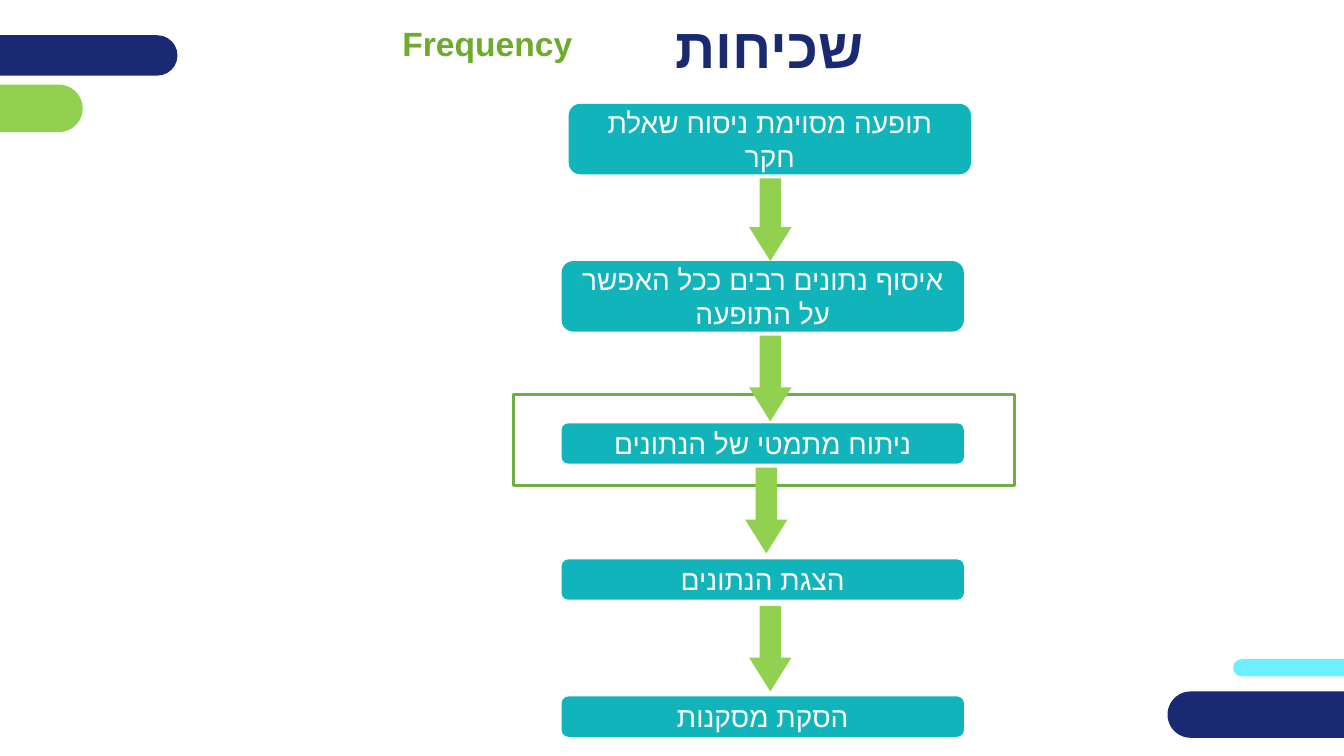
from pptx import Presentation
from pptx.dml.color import RGBColor
from pptx.enum.shapes import MSO_SHAPE
from pptx.enum.text import MSO_ANCHOR, PP_ALIGN
from pptx.oxml.ns import qn
from pptx.util import Emu, Pt

RECTANGLE = MSO_SHAPE.RECTANGLE
ROUNDED = MSO_SHAPE.ROUNDED_RECTANGLE
STEP = MSO_SHAPE.FLOWCHART_ALTERNATE_PROCESS
DOWN_ARROW = MSO_SHAPE.DOWN_ARROW
MIDDLE, TOP = MSO_ANCHOR.MIDDLE, MSO_ANCHOR.TOP
CENTER = PP_ALIGN.CENTER

NAVY = RGBColor(0x19, 0x2A, 0x72)
LIME = RGBColor(0x92, 0xD0, 0x50)
CYAN = RGBColor(0x6C, 0xF0, 0xFF)
TEAL = RGBColor(0x12, 0xB4, 0xBC)
FRAME_GREEN = RGBColor(0x70, 0xAD, 0x47)
TEXT_GREEN = RGBColor(0x6D, 0xAA, 0x2D)
WHITE = RGBColor(0xFF, 0xFF, 0xFF)

PX = 9144  # EMU per px, 100 px to the inch

deck = Presentation()
deck.slide_width, deck.slide_height = Emu(1333 * PX), Emu(750 * PX)
slide = deck.slides.add_slide(deck.slide_layouts[6])


def add_block(kind, place, fill, adjust=()):
    block = slide.shapes.add_shape(kind, *(Emu(length * PX) for length in place))
    block.shadow.inherit = False
    block.fill.solid()
    block.fill.fore_color.rgb = fill
    block.line.fill.background()
    for index, value in enumerate(adjust):
        block.adjustments[index] = value
    return block


def write(box, text, size=20, color=WHITE, bold=False, align=CENTER, anchor=MIDDLE):
    frame = box.text_frame
    frame.word_wrap = True
    frame.vertical_anchor = anchor
    para = frame.paragraphs[0]
    para.alignment = align
    para._p.get_or_add_pPr().set("rtl", "1")
    span = para.add_run()
    span.text = text
    span.font.name = "Arial"
    span.font.size = Pt(size)
    span.font.bold = bold
    span.font.color.rgb = color
    # Hebrew letters take the complex-script font
    complex_font = span.font._element.makeelement(qn("a:cs"), {"typeface": "Arial"})
    span.font._element.append(complex_font)


# Corner bars
for place, color in [
    ((1223, 654, 174, 17), CYAN),
    ((-45, 84, 127, 47), LIME),
    ((-53, 35, 229, 40), NAVY),
    ((1158, 686, 240, 46), NAVY),
]:
    add_block(ROUNDED, place, color, adjust=(0.5,))

# Frame around the analysis step
frame_box = add_block(RECTANGLE, (509, 391, 497, 91), WHITE)
frame_box.line.color.rgb = FRAME_GREEN
frame_box.line.width = Pt(2)

# Headings
title = slide.shapes.add_textbox(*(Emu(n * PX) for n in (203, 11, 1121, 70)))
write(title, "שכיחות", size=40, color=NAVY, bold=True)
subtitle = slide.shapes.add_textbox(*(Emu(n * PX) for n in (380, 18, 200, 50)))
write(subtitle, "Frequency ", size=24, color=TEXT_GREEN, bold=True, align=None, anchor=TOP)

# Arrows between steps
for left, top, height in [(743, 177, 82), (743, 333, 85), (739, 464, 85), (743, 601, 85)]:
    add_block(DOWN_ARROW, (left, top, 42, height), LIME, adjust=(0.5, 0.8))

# Research steps
for left, top, height, text in [
    (564, 103, 70, "תופעה מסוימת ניסוח שאלת חקר"),
    (557, 259, 70, "איסוף נתונים רבים ככל האפשר על התופעה"),
    (557, 420, 40, "ניתוח מתמטי של הנתונים"),
    (557, 555, 40, "הצגת הנתונים"),
    (557, 691, 40, "הסקת מסקנות"),
]:
    write(add_block(STEP, (left, top, 399, height), TEAL), text)

deck.save("out.pptx")
